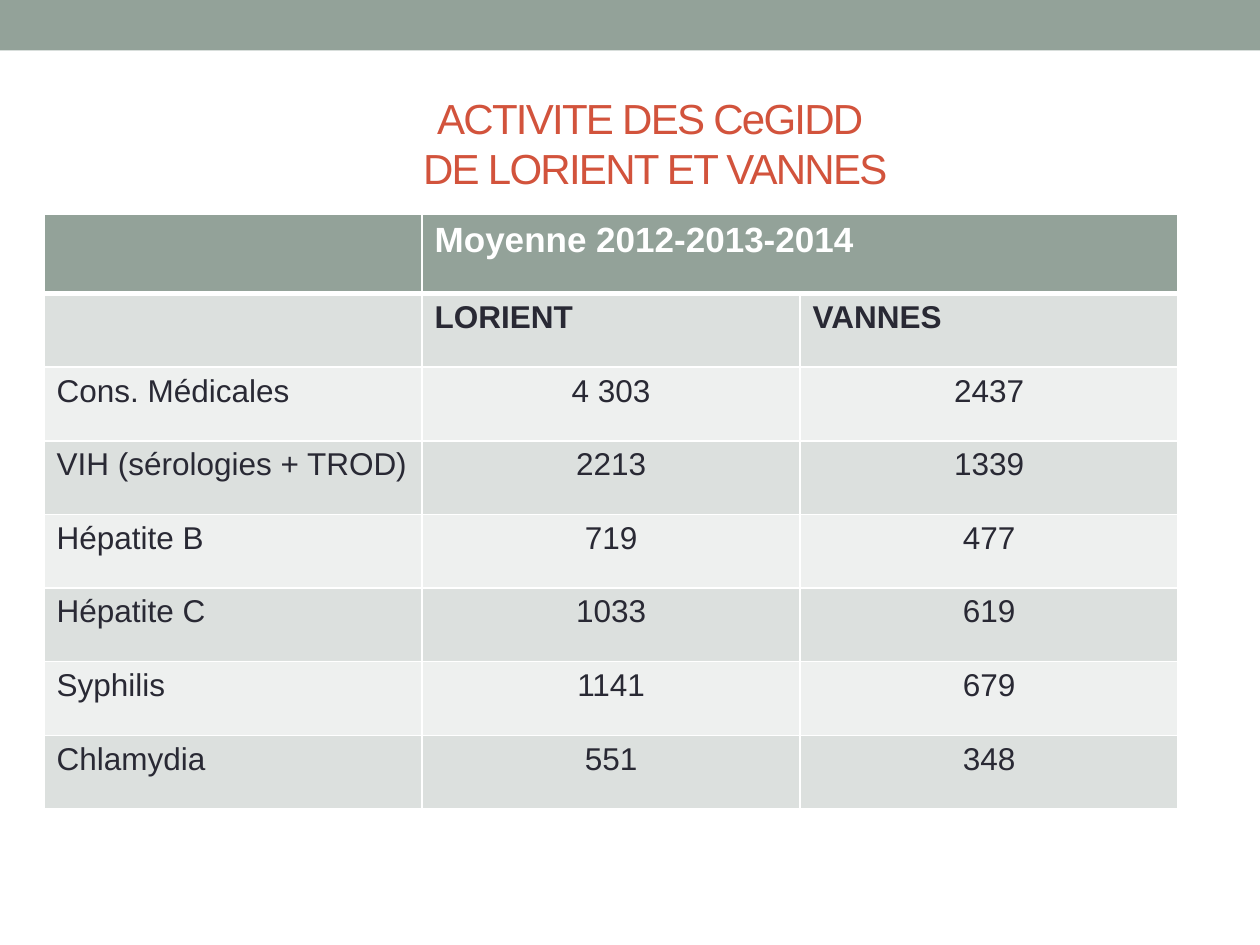
import pptx
import pptx.dml.color
import pptx.enum.shapes
import pptx.enum.text
import pptx.oxml
import pptx.oxml.ns
import pptx.util
from pptx.util import Inches

ALIGN = pptx.enum.text.PP_ALIGN


def rgb(value):
    return pptx.dml.color.RGBColor.from_string(value)


def write(p, text, size=18, color="292934", bold=False, align=ALIGN.LEFT,
          font="Arial", spacing=0, leading=None):
    p.alignment = align
    if leading:
        p.line_spacing = pptx.util.Pt(leading)
    r = p.add_run()
    r.text = text
    r.font.name = font
    r.font.size = pptx.util.Pt(size)
    r.font.bold = bold
    r.font.color.rgb = rgb(color)
    if spacing:
        r.font._element.set("spc", str(int(spacing * 100)))


class Deck:
    """Holds the palette, the presentation and the current slide."""

    sage, accent, white = "93A299", "D2533C", "FFFFFF"
    bands = ("DCE0DE", "EEF0EF")

    def __init__(self, width, height):
        self.prs = pptx.Presentation()
        self.prs.slide_width = Inches(width)
        self.prs.slide_height = Inches(height)
        self.s = self.prs.slides.add_slide(self.prs.slide_layouts[6])

    def bar(self, x, y, w, h):
        sp = self.s.shapes.add_shape(pptx.enum.shapes.MSO_SHAPE.RECTANGLE,
                                     Inches(x), Inches(y), Inches(w), Inches(h))
        sp.shadow.inherit = False
        sp.fill.solid()
        sp.fill.fore_color.rgb = rgb(self.sage)
        sp.line.fill.background()

    def title(self, lines, x, y, w, h):
        tf = self.s.shapes.add_textbox(Inches(x), Inches(y), Inches(w), Inches(h)).text_frame
        tf.word_wrap = True
        for i, line in enumerate(lines):
            p = tf.add_paragraph() if i else tf.paragraphs[0]
            write(p, line, size=24, color=self.accent, align=ALIGN.CENTER,
                  spacing=-1, leading=29)

    def borders(self, cell, top, bottom):
        tc_pr = cell._tc.get_or_add_tcPr()
        for side, width in zip("LRTB", (1, 1, top, bottom)):
            tc_pr.append(pptx.oxml.parse_xml(
                f'<a:ln{side} {pptx.oxml.ns.nsdecls("a")} w="{pptx.util.Pt(width)}">'
                f'<a:solidFill><a:srgbClr val="{self.white}"/></a:solidFill></a:ln{side}>'))

    def table(self, rows, x, y, w, h, header_h):
        table = self.s.shapes.add_table(len(rows), len(rows[0]), Inches(x), Inches(y),
                                        Inches(w), Inches(h)).table
        for i, row in enumerate(rows):
            table.rows[i].height = Inches(header_h if i == 0 else (h - header_h) / (len(rows) - 1))
            for j, text in enumerate(row):
                cell = table.cell(i, j)
                self.borders(cell, top=3 if i == 1 else 1, bottom=3 if i == 0 else 1)
                cell.fill.solid()
                cell.fill.fore_color.rgb = rgb(self.bands[(i - 1) % 2] if i else self.sage)
                if text:
                    write(cell.text_frame.paragraphs[0], text,
                          size=18 if i else 20,
                          color="292934" if i else self.white,
                          bold=i < 2,
                          align=ALIGN.CENTER if i > 1 and j else ALIGN.LEFT)
        table.cell(0, 1).merge(table.cell(0, 2))


def main():
    deck = Deck(10, 7.5)
    deck.bar(0, 0, 10, 0.4)
    deck.table([
        ("", "Moyenne 2012-2013-2014", ""),
        ("", "LORIENT", "VANNES"),
        ("Cons. Médicales", "4 303", "2437"),
        ("VIH (sérologies + TROD)", "2213", "1339"),
        ("Hépatite B", "719", "477"),
        ("Hépatite C", "1033", "619"),
        ("Syphilis", "1141", "679"),
        ("Chlamydia", "551", "348"),
    ], 0.35, 1.7, 9, 4.72, header_h=0.63)
    deck.title(("ACTIVITE DES CeGIDD ", "DE LORIENT ET VANNES"), 2.01, 0.68, 6.38, 0.91)
    deck.prs.save("out.pptx")


if __name__ == "__main__":
    main()
